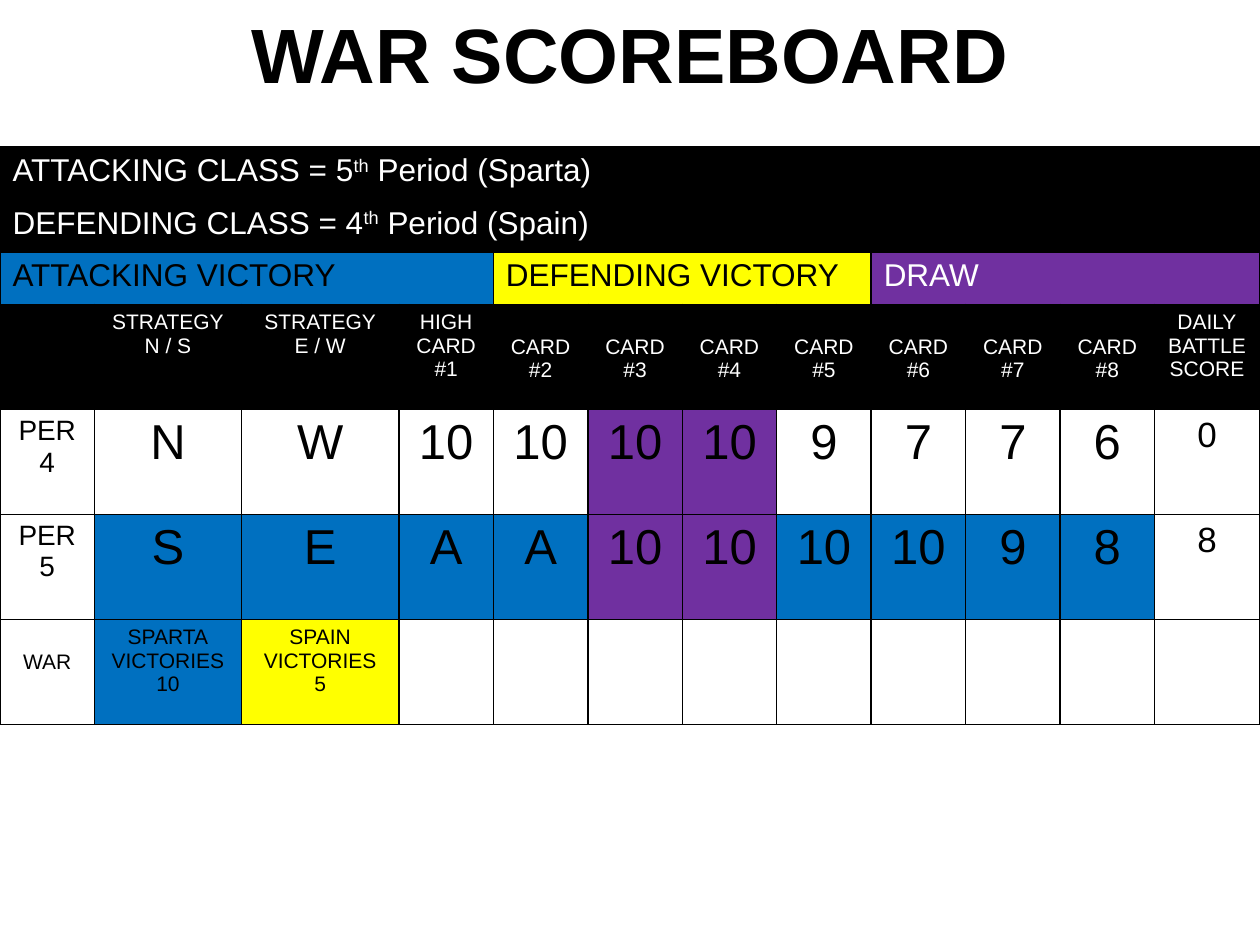
from dataclasses import dataclass

from lxml.etree import SubElement
from pptx import Presentation
from pptx.dml.color import RGBColor as Rgb
from pptx.enum.text import MSO_ANCHOR as Anchor, PP_ALIGN as Align
from pptx.oxml.ns import qn
from pptx.util import Cm, Pt


@dataclass(frozen=True)
class Theme:
    font: str = "Arial"
    black: str = "000000"
    white: str = "FFFFFF"
    attack: str = "0070C0"
    defend: str = "FFFF00"
    draw: str = "7030A0"
    title: int = 44
    card: int = 28
    score: int = 20
    banner: int = 18
    period: int = 16
    label: int = 12
    border: float = 1


THEME = Theme()
PAGE_WIDTH, PAGE_HEIGHT = 25.4, 19.05
UNIT = PAGE_WIDTH / 120
COLUMNS = [9, 14, 15] + [9] * 8 + [10]
ROWS = [5] * 3 + [10] * 4
LINE_DROP = 0.62


def units(count):
    return Cm(count * UNIT)


class Board:
    def __init__(self, page, theme):
        self.page = page
        self.theme = theme

    def style(self, span, size, color, bold=False):
        span.font.name = self.theme.font
        span.font.size = Pt(size)
        span.font.bold = bold
        span.font.color.rgb = Rgb.from_string(color)

    def title(self, text):
        box = self.page.shapes.add_textbox(0, 0, units(120), units(10))
        frame = box.text_frame
        frame.word_wrap = True
        frame.vertical_anchor = Anchor.MIDDLE
        frame.text = text
        para = frame.paragraphs[0]
        para.alignment = Align.CENTER
        self.style(para.runs[0], self.theme.title, self.theme.black, True)

    def table(self):
        shape = self.page.shapes.add_table(
            len(ROWS), len(COLUMNS), 0, units(14), units(120), units(sum(ROWS)))
        self.grid = shape.table
        self.grid.first_row = False
        self.grid.horz_banding = False
        for column, width in zip(self.grid.columns, COLUMNS):
            column.width = units(width)
        for row, height in zip(self.grid.rows, ROWS):
            row.height = units(height)
        for cell in self.grid.iter_cells():
            self.border(cell)
            self.paint(cell, self.theme.white)

    def border(self, cell):
        properties = cell._tc.get_or_add_tcPr()
        for side in ("lnL", "lnR", "lnT", "lnB"):
            line = SubElement(properties, qn(f"a:{side}"), w=str(Pt(self.theme.border)))
            fill = SubElement(line, qn("a:solidFill"))
            SubElement(fill, qn("a:srgbClr"), val=self.theme.black)

    def paint(self, cell, color):
        cell.fill.solid()
        cell.fill.fore_color.rgb = Rgb.from_string(color)

    def banner(self, row, first, last, text, fill, color):
        cell = self.grid.cell(row, first)
        cell.merge(self.grid.cell(row, last))
        self.paint(cell, fill)
        para = cell.text_frame.paragraphs[0]
        for index, part in enumerate(text.split("^")):
            span = para.add_run()
            span.text = part
            self.style(span, self.theme.banner, color)
            if index % 2:
                span._r.get_or_add_rPr().set("baseline", "30000")

    def entry(self, row, column, text, size, fill=None, color=None, dropped=False):
        cell = self.grid.cell(row, column)
        self.paint(cell, fill or self.theme.white)
        if dropped:
            cell.margin_top = Cm(LINE_DROP)
        cell.text_frame.text = text
        for para in cell.text_frame.paragraphs:
            para.alignment = Align.CENTER
            for span in para.runs:
                self.style(span, size, color or self.theme.black)


def main():
    deck = Presentation()
    deck.slide_width, deck.slide_height = Cm(PAGE_WIDTH), Cm(PAGE_HEIGHT)
    page = deck.slides.add_slide(deck.slide_layouts[6])
    theme = THEME
    board = Board(page, theme)
    board.title("WAR SCOREBOARD")
    board.table()

    banners = [
        (0, 0, 11, "ATTACKING CLASS = 5^th^ Period (Sparta)", theme.black, theme.white),
        (1, 0, 11, "DEFENDING CLASS = 4^th^ Period (Spain)", theme.black, theme.white),
        (2, 0, 3, "ATTACKING VICTORY", theme.attack, theme.black),
        (2, 4, 7, "DEFENDING VICTORY", theme.defend, theme.black),
        (2, 8, 11, "DRAW", theme.draw, theme.white),
    ]
    for banner in banners:
        board.banner(*banner)

    cards = [f"CARD\n#{number}" for number in range(2, 9)]
    headings = ["", "STRATEGY\nN / S", "STRATEGY\nE / W", "HIGH\nCARD\n#1",
                *cards, "DAILY\nBATTLE\nSCORE"]
    for column, text in enumerate(headings):
        board.entry(3, column, text, theme.label, theme.black, theme.white, text in cards)

    draws = (5, 6)
    periods = [
        (4, "PER\n4", "N W 10 10 10 10 9 7 7 6", "0", theme.white),
        (5, "PER\n5", "S E A A 10 10 10 10 9 8", "8", theme.attack),
    ]
    for row, name, plays, score, fill in periods:
        board.entry(row, 0, name, theme.period)
        for column, play in enumerate(plays.split(), start=1):
            board.entry(row, column, play, theme.card,
                        theme.draw if column in draws else fill)
        board.entry(row, 11, score, theme.score)

    board.entry(6, 0, "WAR", theme.label, dropped=True)
    board.entry(6, 1, "SPARTA\nVICTORIES\n10", theme.label, theme.attack)
    board.entry(6, 2, "SPAIN\nVICTORIES\n5", theme.label, theme.defend)
    deck.save("out.pptx")


if __name__ == "__main__":
    main()
